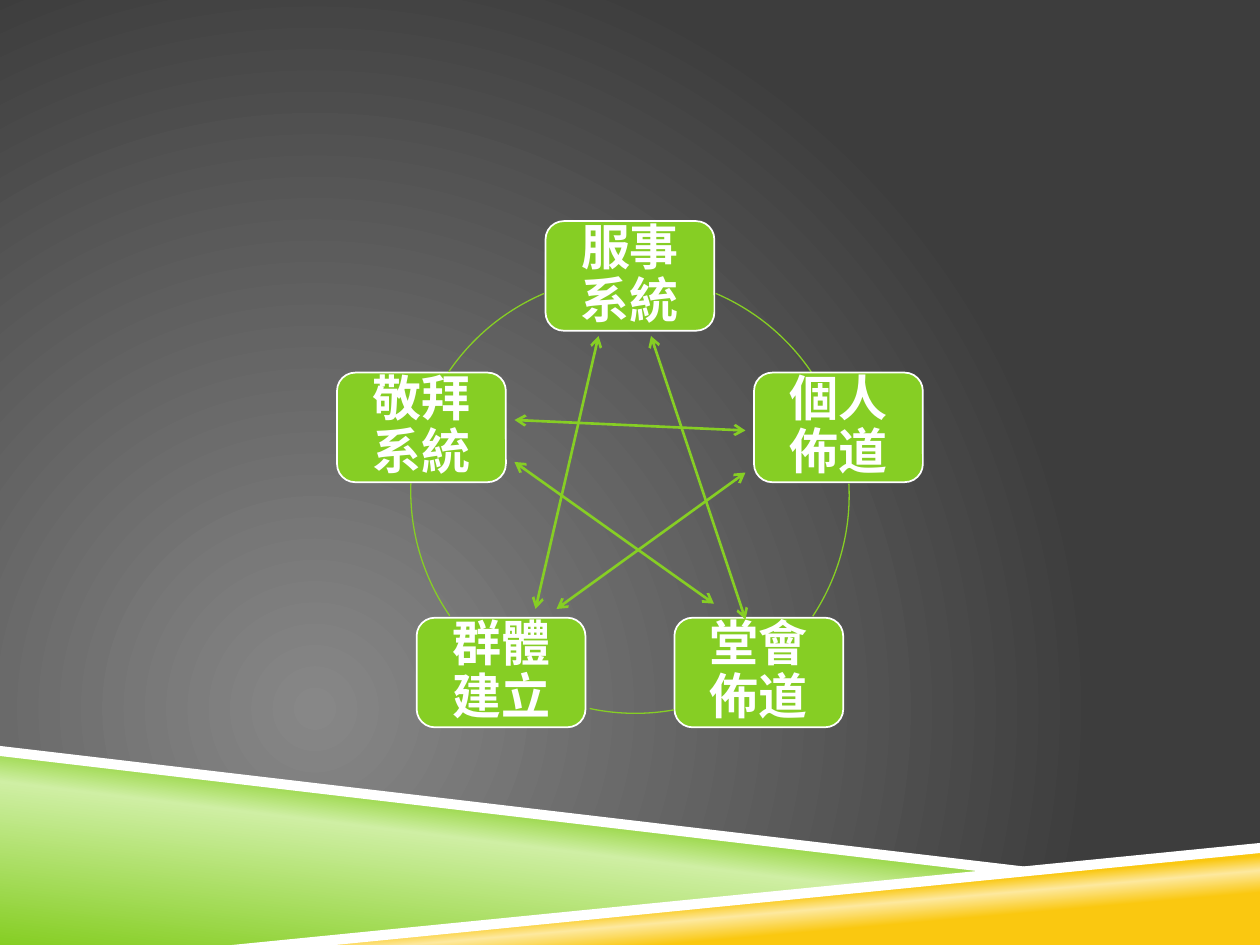
from math import cos, radians, sin

from lxml import etree
from pptx import Presentation
from pptx.dml.color import RGBColor
from pptx.enum.shapes import MSO_CONNECTOR, MSO_SHAPE
from pptx.enum.text import MSO_ANCHOR, PP_ALIGN
from pptx.oxml.ns import qn
from pptx.util import Inches, Pt

BOX, ARC = MSO_SHAPE.ROUNDED_RECTANGLE, MSO_SHAPE.ARC
LINE = MSO_CONNECTOR.STRAIGHT
MID, CENTER = MSO_ANCHOR.MIDDLE, PP_ALIGN.CENTER

GREEN = RGBColor(0x86, 0xCE, 0x24)
PALE = RGBColor(0xCF, 0xEF, 0xA4)
GOLD = RGBColor(0xFA, 0xC8, 0x10)
CREAM = RGBColor(0xFD, 0xE9, 0x9F)
WHITE = RGBColor(0xFF, 0xFF, 0xFF)
GRAY = RGBColor(0x87, 0x87, 0x87)
DARK = RGBColor(0x3D, 0x3D, 0x3D)

WIDE, HIGH = Inches(10), Inches(7.5)
COLS, ROWS = 120, 90
MID_X, MID_Y, RADIUS = 60, 47.16, 20.88
BOX_W, BOX_H, INSET = 16.08, 10.44, 1.92

LABELS = ["服事系統", "個人佈道", "堂會佈道", "群體建立", "敬拜系統"]
ARCS = [
    (293, 325.8, 0, 0),
    (357, 33.5, 0, 0),
    (79.8, 102, 0.5, -0.1),
    (145.3, 182, 0, -0.4),
    (214.2, 247, 0, 0),
]
ARROWS = [
    (71, 45, 53, 58),
    (62, 32, 71, 59),
    (49, 40, 71, 41),
    (49, 44, 68, 57.5),
    (57, 32, 51, 58),
]
BANDS = [
    ([(0, 71.64), (95.04, 83.04), (24, 90), (0, 90)],
     [(0, GREEN), (52, PALE), (66, GREEN)], 277),
    ([(23.76, 90), (120, 80.64), (120, 90)],
     [(28, GOLD), (40, CREAM), (48, GOLD)], 265),
    ([(0, 71.04), (0, 72), (94.8, 83.16), (99.84, 82.8)], None, 0),
    ([(120, 80.28), (22.08, 90), (31.92, 90), (120, 81.24)], None, 0),
]


def col(n):
    return round(WIDE * n / COLS)


def row(n):
    return round(HIGH * n / ROWS)


def set_stops(root, stops):
    grad = root.find(".//" + qn("a:gradFill"))
    for child in list(grad):
        grad.remove(child)
    items = etree.SubElement(grad, qn("a:gsLst"))
    for share, color in stops:
        stop = etree.SubElement(items, qn("a:gs"), pos=str(share * 1000))
        etree.SubElement(stop, qn("a:srgbClr"), val=str(color))
    return grad


def set_back(slide):
    slide.background.fill.gradient()
    grad = set_stops(slide.element, [(0, GRAY), (100, DARK)])
    path = etree.SubElement(grad, qn("a:path"), path="circle")
    etree.SubElement(path, qn("a:fillToRect"),
                     l="50000", t="100000", r="100000", b="50000")


def add_band(slide, points, stops, angle):
    spots = [(col(x), row(y)) for x, y in points]
    form = slide.shapes.build_freeform(*spots[0])
    form.add_line_segments(spots[1:], close=True)
    band = form.convert_to_shape()
    band.shadow.inherit = False
    band.line.fill.background()
    if stops:
        band.fill.gradient()
        grad = set_stops(band.element, stops)
        etree.SubElement(grad, qn("a:lin"), ang=str(angle * 60000), scaled="0")
    else:
        band.fill.solid()
        band.fill.fore_color.rgb = WHITE


def add_round(slide, kind, x, y, w, h, color, width):
    shape = slide.shapes.add_shape(
        kind, col(x - w / 2), row(y - h / 2), col(w), row(h))
    shape.shadow.inherit = False
    shape.line.color.rgb = color
    shape.line.width = Pt(width)
    return shape


def add_arc(slide, start, end, dx, dy):
    arc = add_round(slide, ARC, MID_X + dx, MID_Y + dy,
                    2 * RADIUS, 2 * RADIUS, GREEN, 0.75)
    arc.fill.background()
    arc.adjustments[0] = start * 0.6
    arc.adjustments[1] = end * 0.6


def add_box(slide, label, turn):
    x = MID_X + RADIUS * sin(radians(turn))
    y = MID_Y - RADIUS * cos(radians(turn))
    box = add_round(slide, BOX, x, y, BOX_W, BOX_H, WHITE, 1)
    box.fill.solid()
    box.fill.fore_color.rgb = GREEN
    frame = box.text_frame
    frame.word_wrap = True
    frame.vertical_anchor = MID
    frame.margin_left = frame.margin_right = col(INSET)
    frame.margin_top = frame.margin_bottom = row(INSET)
    frame.text = label
    para = frame.paragraphs[0]
    para.alignment = CENTER
    para.line_spacing = 0.9
    font = para.runs[0].font
    font.name, font.size, font.bold = "Calibri", Pt(28), True
    font.color.rgb = WHITE


def add_arrow(slide, x1, y1, x2, y2):
    arrow = slide.shapes.add_connector(LINE, col(x1), row(y1), col(x2), row(y2))
    arrow.line.color.rgb = GREEN
    arrow.line.width = Pt(1.5)
    props = arrow.element.spPr
    for end in ("a:headEnd", "a:tailEnd"):
        etree.SubElement(props.find(qn("a:ln")), qn(end), type="arrow")
    etree.SubElement(props, qn("a:effectLst"))


def main():
    deck = Presentation()
    deck.slide_width, deck.slide_height = WIDE, HIGH
    slide = deck.slides.add_slide(deck.slide_layouts[6])
    set_back(slide)
    for band in BANDS:
        add_band(slide, *band)
    for i, (label, arc) in enumerate(zip(LABELS, ARCS)):
        add_box(slide, label, i * 360 / len(LABELS))
        add_arc(slide, *arc)
    for arrow in ARROWS:
        add_arrow(slide, *arrow)
    deck.save("out.pptx")


if __name__ == "__main__":
    main()
